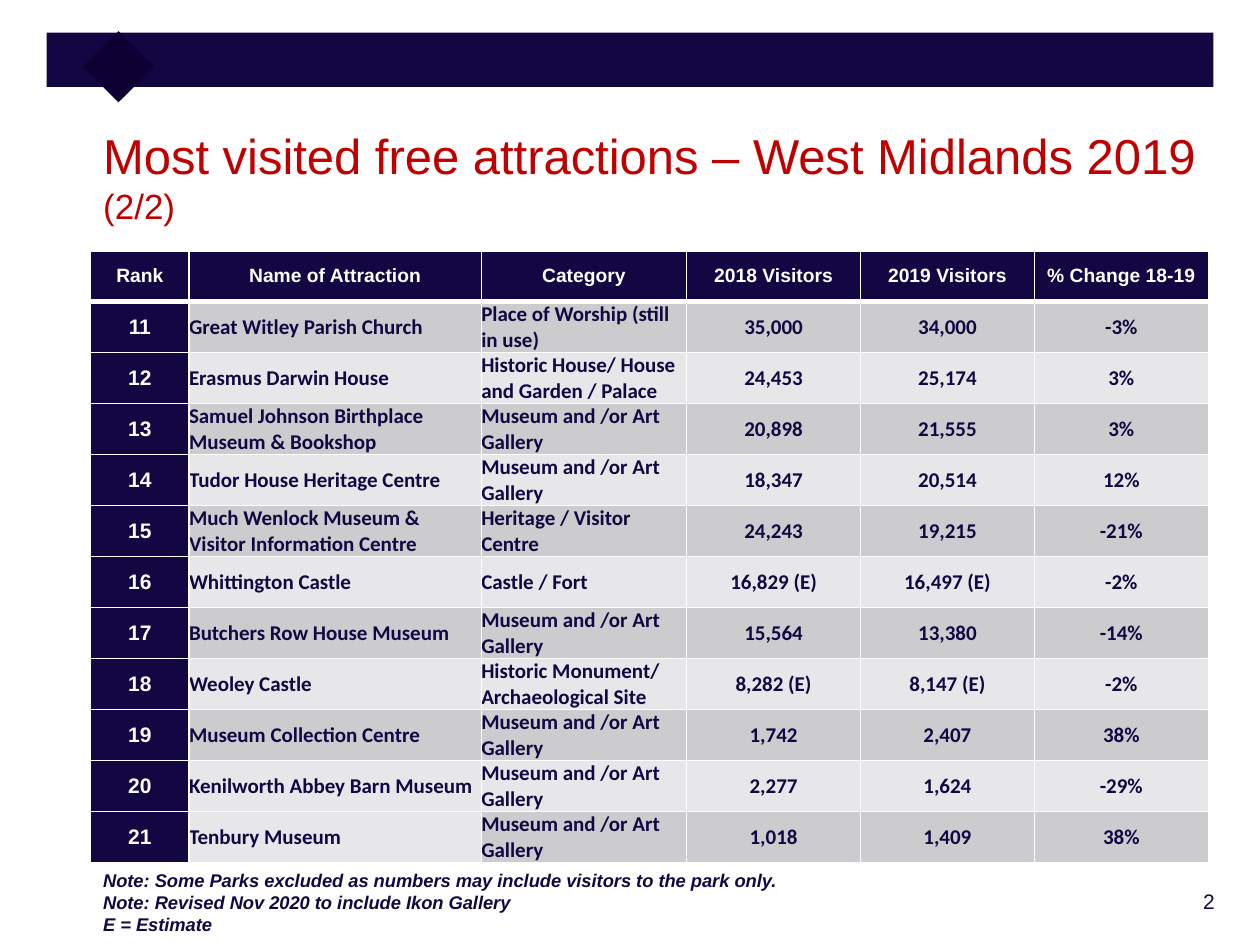
from typing import NamedTuple

from lxml.etree import SubElement
from pptx import Presentation
from pptx.dml.color import RGBColor
from pptx.enum.shapes import MSO_SHAPE
from pptx.enum.text import MSO_ANCHOR, PP_ALIGN
from pptx.oxml.ns import qn
from pptx.util import Inches, Pt

COLOURS = {
    "navy": "120742",
    "diamond": "0E0033",
    "red": "C00000",
    "white": "FFFFFF",
    "dark_band": "CCCCCF",
    "light_band": "E7E7E9",
}


class Box(NamedTuple):
    left: float
    top: float
    width: float
    height: float


class Attraction(NamedTuple):
    name: str
    category: str
    visitors_2018: str
    visitors_2019: str
    change: str


HEADINGS = ["Rank", "Name of Attraction", "Category",
            "2018 Visitors", "2019 Visitors", "% Change 18-19"]
COLUMN_WIDTHS = [0.78, 2.32, 1.63, 1.38, 1.38, 1.38]
FIRST_RANK = 11
MUSEUM = "Museum and /or Art Gallery"
ATTRACTIONS = [
    Attraction("Great Witley Parish Church", "Place of Worship (still in use)",
               "35,000", "34,000", "-3%"),
    Attraction("Erasmus Darwin House", "Historic House/ House and Garden / Palace",
               "24,453", "25,174", "3%"),
    Attraction("Samuel Johnson Birthplace Museum & Bookshop", MUSEUM,
               "20,898", "21,555", "3%"),
    Attraction("Tudor House Heritage Centre", MUSEUM, "18,347", "20,514", "12%"),
    Attraction("Much Wenlock Museum & Visitor Information Centre",
               "Heritage / Visitor Centre", "24,243", "19,215", "-21%"),
    Attraction("Whittington Castle", "Castle / Fort",
               "16,829 (E)", "16,497 (E)", "-2%"),
    Attraction("Butchers Row House Museum", MUSEUM, "15,564", "13,380", "-14%"),
    Attraction("Weoley Castle", "Historic Monument/ Archaeological Site",
               "8,282 (E)", "8,147 (E)", "-2%"),
    Attraction("Museum Collection Centre", MUSEUM, "1,742", "2,407", "38%"),
    Attraction("Kenilworth Abbey Barn Museum", MUSEUM, "2,277", "1,624", "-29%"),
    Attraction("Tenbury Museum", MUSEUM, "1,018", "1,409", "38%"),
]
NOTES = [
    "Note: Some Parks excluded as numbers may include visitors to the park only.",
    "Note: Revised Nov 2020 to include Ikon Gallery",
    "E = Estimate",
]


def write_text(paragraph, text: str, *, size: float, colour: str = "navy",
               font: str = "Arial", bold: bool = False, italic: bool = False,
               align: PP_ALIGN = PP_ALIGN.LEFT) -> None:
    paragraph.alignment = align
    run = paragraph.add_run()
    run.text = text
    run.font.size = Pt(size)
    run.font.name = font
    run.font.bold = bold
    run.font.italic = italic
    run.font.color.rgb = RGBColor.from_string(COLOURS[colour])


def add_frame(slide, box: Box):
    frame = slide.shapes.add_textbox(*map(Inches, box)).text_frame
    frame.word_wrap = True
    return frame


def add_block(slide, box: Box, colour: str, rotation: float = 0) -> None:
    block = slide.shapes.add_shape(MSO_SHAPE.RECTANGLE, *map(Inches, box))
    block.shadow.inherit = False
    block.fill.solid()
    block.fill.fore_color.rgb = RGBColor.from_string(COLOURS[colour])
    block.line.fill.background()
    block.rotation = rotation


def format_cell(cell, fill: str, top: float = 1, bottom: float = 1,
                inset: bool = True) -> None:
    properties = cell._tc.get_or_add_tcPr()
    for side, width in (("L", 1), ("R", 1), ("T", top), ("B", bottom)):
        border = SubElement(properties, qn(f"a:ln{side}"), w=str(Pt(width)))
        border_fill = SubElement(border, qn("a:solidFill"))
        SubElement(border_fill, qn("a:srgbClr"), val=COLOURS["white"])
    cell.fill.solid()
    cell.fill.fore_color.rgb = RGBColor.from_string(COLOURS[fill])
    cell.vertical_anchor = MSO_ANCHOR.MIDDLE
    if not inset:
        cell.margin_left = cell.margin_right = Inches(0)
        cell.margin_top = cell.margin_bottom = Inches(0)


def add_attractions(slide, box: Box) -> None:
    row_count = len(ATTRACTIONS) + 1
    table = slide.shapes.add_table(
        row_count, len(HEADINGS), *map(Inches, box)).table
    for column, width in zip(table.columns, COLUMN_WIDTHS):
        column.width = Inches(width)
    for row in table.rows:
        row.height = Inches(box.height / row_count)

    for column_index, heading in enumerate(HEADINGS):
        cell = table.cell(0, column_index)
        format_cell(cell, "navy", bottom=3)
        write_text(cell.text_frame.paragraphs[0], heading, size=11,
                   colour="white", bold=True, align=PP_ALIGN.CENTER)

    for row_index, attraction in enumerate(ATTRACTIONS, start=1):
        top = 3 if row_index == 1 else 1
        band = "dark_band" if row_index % 2 else "light_band"
        rank = table.cell(row_index, 0)
        format_cell(rank, "navy", top=top)
        write_text(rank.text_frame.paragraphs[0], str(FIRST_RANK + row_index - 1),
                   size=12, colour="white", bold=True, align=PP_ALIGN.CENTER)
        for column_index, value in enumerate(attraction, start=1):
            cell = table.cell(row_index, column_index)
            last_name = row_index == len(ATTRACTIONS) and column_index == 1
            format_cell(cell, "light_band" if last_name else band,
                        top=top, inset=False)
            write_text(cell.text_frame.paragraphs[0], value, size=12,
                       font="Calibri", bold=True,
                       align=PP_ALIGN.LEFT if column_index < 3 else PP_ALIGN.CENTER)


def main() -> None:
    presentation = Presentation()
    presentation.slide_width = Inches(10)
    presentation.slide_height = Inches(7.5)
    slide = presentation.slides.add_slide(presentation.slide_layouts[6])

    page_number = add_frame(slide, Box(8.53, 7, 1.21, 0.36))
    write_text(page_number.paragraphs[0], "2", size=12, align=PP_ALIGN.RIGHT)

    add_block(slide, Box(0.37, 0.26, 9.26, 0.43), "navy")
    add_block(slide, Box(0.74, 0.33, 0.4, 0.4), "diamond", rotation=45)

    title = add_frame(slide, Box(0.72, 0.95, 8.91, 0.89)).paragraphs[0]
    write_text(title, "Most visited free attractions – West Midlands 2019",
               size=28, colour="red")
    title.add_line_break()
    write_text(title, "(2/2)", size=20, colour="red")

    add_attractions(slide, Box(0.72, 1.99, 8.86, 4.86))

    notes = add_frame(slide, Box(0.72, 6.85, 8.65, 0.63))
    for index, note in enumerate(NOTES):
        paragraph = notes.add_paragraph() if index else notes.paragraphs[0]
        write_text(paragraph, note, size=10.5, bold=True, italic=True)

    presentation.save("out.pptx")


if __name__ == "__main__":
    main()
